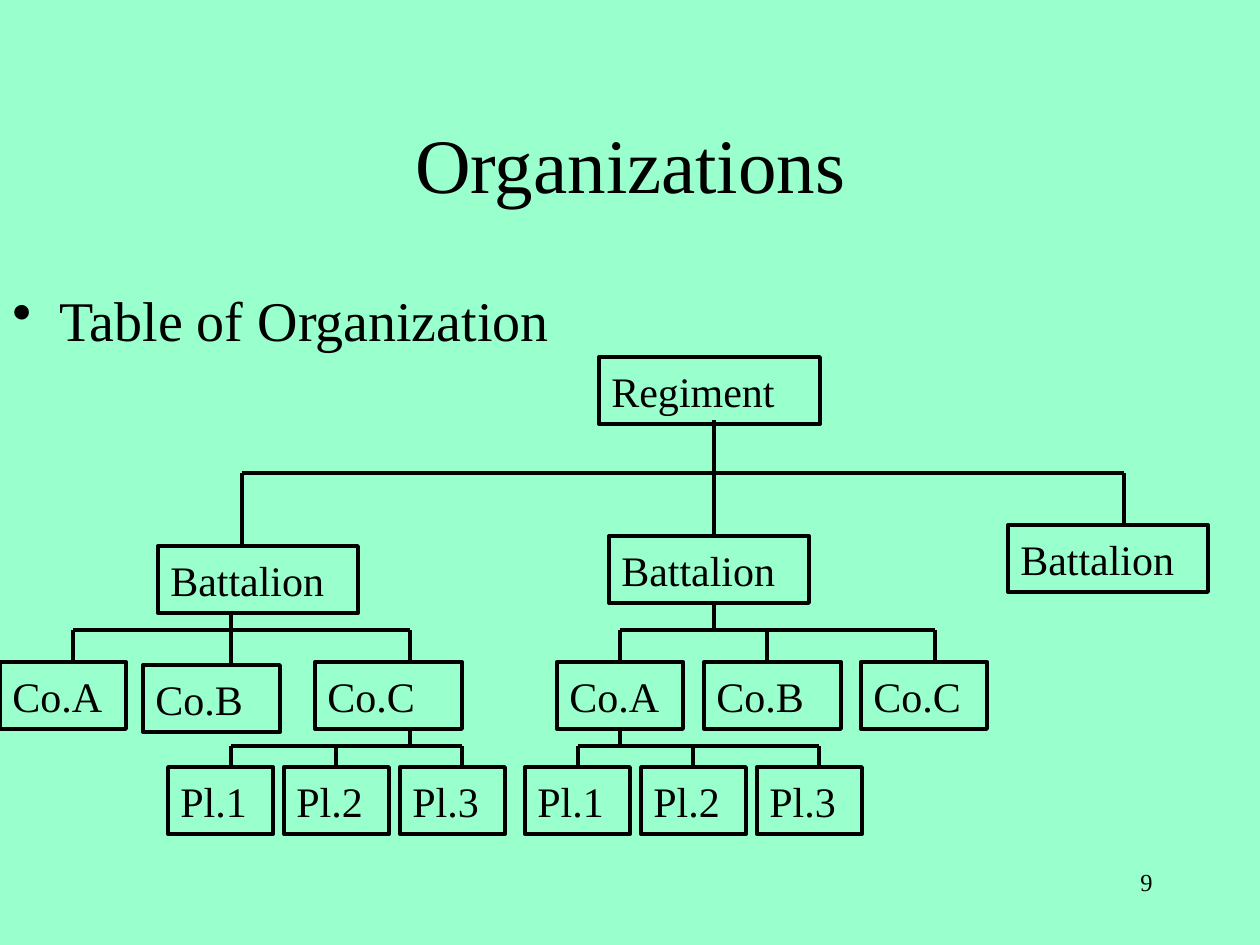
from lxml.etree import SubElement
from pptx import Presentation
from pptx.dml.color import RGBColor
from pptx.enum.shapes import MSO_CONNECTOR, MSO_SHAPE
from pptx.enum.text import MSO_ANCHOR, PP_ALIGN
from pptx.oxml.ns import qn
from pptx.util import Emu, Pt

FONT = "Times New Roman"
BLACK = RGBColor(0x00, 0x00, 0x00)
MINT = RGBColor(0x99, 0xFF, 0xCC)
LINE_WIDTH = Pt(2.25)
BOX_H = 67

# Boxes: (label, left, top, width)
BOXES = [
    ("Regiment", 599, 357, 221),
    ("Battalion", 158, 546, 200),
    ("Battalion", 609, 536, 200),
    ("Battalion", 1008, 525, 200),
    ("Co.A", 0, 662, 126),
    ("Co.B", 143, 665, 137),
    ("Co.C", 315, 662, 147),
    ("Co.A", 557, 662, 126),
    ("Co.B", 704, 662, 137),
    ("Co.C", 861, 662, 126),
]
PLATOON_LEFTS = (168, 525)
PLATOON_TOP, PLATOON_W, PLATOON_STEP = 767, 105, 116

# Brackets: stem (x, top, bottom), bus height, drops (x, bottom)
BRACKETS = [
    ((714, 420, 536), 473, [(242, 546), (1124, 525)]),
    ((231, 611, 663), 630, [(73, 662), (410, 662)]),
    ((714, 602, 630), 630, [(620, 662), (767, 662), (935, 662)]),
    ((410, 729, 746), 746, [(231, 767), (336, 767), (462, 767)]),
    ((620, 729, 746), 746, [(578, 767), (693, 767), (819, 767)]),
]


def px(n):
    return Emu(round(n * 914400 / 126))


def add_run(p, text, size):
    r = p.add_run()
    r.text = text
    r.font.name = FONT
    r.font.size = Pt(size)
    r.font.color.rgb = BLACK


def add_text(s, text, left, top, width, height, size):
    tf = s.shapes.add_textbox(px(left), px(top), px(width), px(height)).text_frame
    tf.word_wrap = True
    add_run(tf.paragraphs[0], text, size)
    return tf


def add_title(s, text):
    sp = s.shapes.title
    sp.left, sp.top, sp.width, sp.height = px(95), px(84), px(1071), px(158)
    tf = sp.text_frame
    tf.vertical_anchor = MSO_ANCHOR.MIDDLE
    p = tf.paragraphs[0]
    p.alignment = PP_ALIGN.CENTER
    add_run(p, text, 44)


def add_bullet(s, text):
    tf = add_text(s, text, 0, 273, 1260, 672, 32)
    tf.margin_top = px(13)
    pPr = tf.paragraphs[0]._p.get_or_add_pPr()
    pPr.set("marL", str(px(47)))
    pPr.set("indent", str(px(-47)))
    SubElement(pPr, qn("a:buChar")).set("char", "•")


def add_box(s, text, left, top, width):
    sp = s.shapes.add_shape(MSO_SHAPE.RECTANGLE, px(left), px(top), px(width), px(BOX_H))
    sp.shadow.inherit = False
    sp.fill.background()
    sp.line.color.rgb = BLACK
    sp.line.width = LINE_WIDTH
    tf = sp.text_frame
    tf.word_wrap = True
    tf.vertical_anchor = MSO_ANCHOR.MIDDLE
    p = tf.paragraphs[0]
    p.alignment = PP_ALIGN.LEFT
    add_run(p, text, 24)


def add_line(s, x1, y1, x2, y2):
    line = s.shapes.add_connector(MSO_CONNECTOR.STRAIGHT, px(x1), px(y1), px(x2), px(y2))
    line.line.color.rgb = BLACK
    line.line.width = LINE_WIDTH
    SubElement(line._element.spPr, qn("a:effectLst"))


def add_bracket(s, stem, bus_y, drops):
    x, top, bottom = stem
    add_line(s, x, top, x, bottom)
    add_line(s, drops[0][0], bus_y, drops[-1][0], bus_y)
    for drop_x, drop_bottom in drops:
        add_line(s, drop_x, bus_y, drop_x, drop_bottom)


def main():
    prs = Presentation()
    prs.slide_width, prs.slide_height = px(1260), px(945)
    s = prs.slides.add_slide(prs.slide_layouts[5])
    s.background.fill.solid()
    s.background.fill.fore_color.rgb = MINT

    # Heading, bullet and page number
    add_title(s, "Organizations")
    add_bullet(s, "Table of Organization")
    number = add_text(s, "9", 903, 861, 262, 63, 14)
    number.paragraphs[0].alignment = PP_ALIGN.RIGHT

    # Organization chart
    for box in BOXES:
        add_box(s, *box)
    for left in PLATOON_LEFTS:
        for i in range(3):
            add_box(s, f"Pl.{i + 1}", left + i * PLATOON_STEP, PLATOON_TOP, PLATOON_W)
    for bracket in BRACKETS:
        add_bracket(s, *bracket)

    prs.save("out.pptx")


if __name__ == "__main__":
    main()
